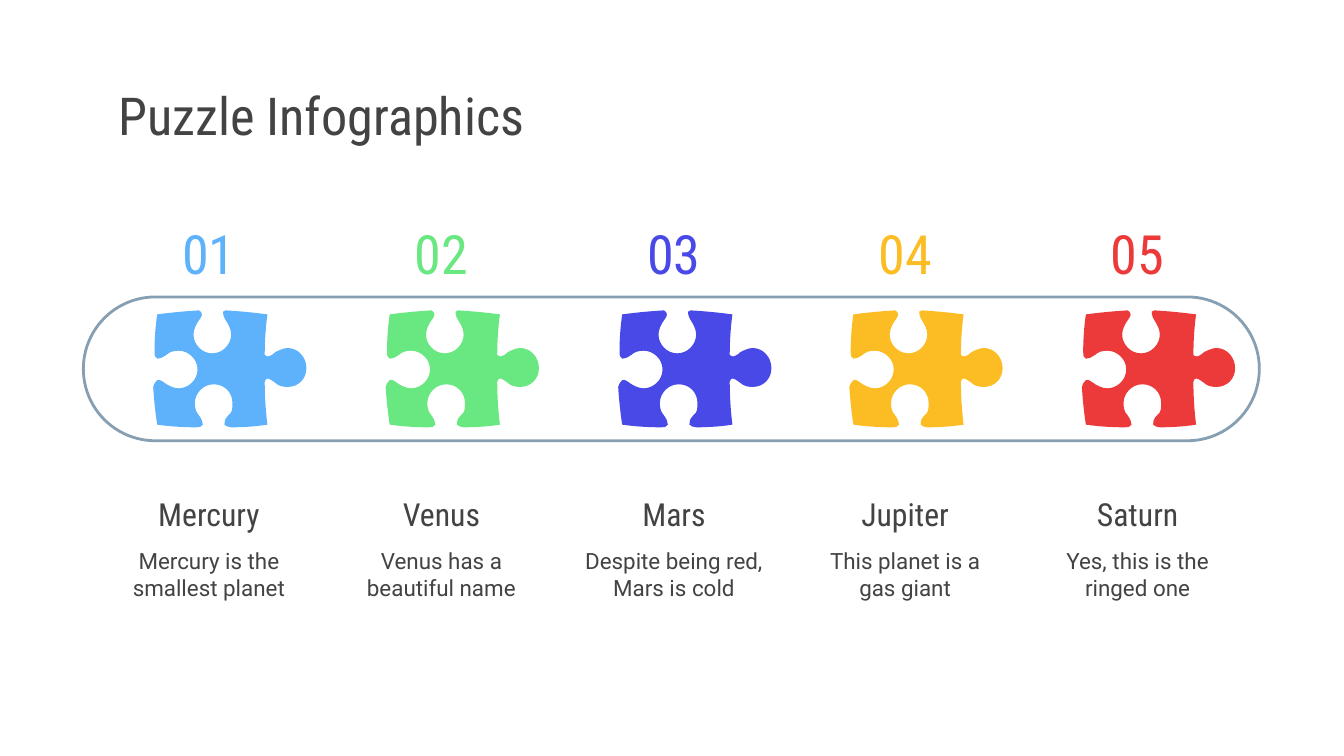
from pptx import Presentation
from pptx.dml.color import RGBColor as RGB
from pptx.enum.shapes import MSO_SHAPE as SHAPE
from pptx.enum.text import MSO_ANCHOR as ANCHOR, MSO_AUTO_SIZE as AUTO, PP_ALIGN as ALIGN
from pptx.oxml.ns import qn
from pptx.util import Pt

PX = 9144  # EMU per px, 100 px to the inch
THEME = {
    "head": "Roboto Condensed", "body": "Roboto",
    "ink": "434343", "frame": "869FB2",
    "title": 28, "number": 29, "name": 17, "note": 12,
}
PLANETS = [
    ("Mercury", "Mercury is the smallest planet", "5EB2FC"),
    ("Venus", "Venus has a beautiful name", "69E781"),
    ("Mars", "Despite being red, Mars is cold", "4949E7"),
    ("Jupiter", "This planet is a gas giant", "FCBD24"),
    ("Saturn", "Yes, this is the ringed one", "EC3A3B"),
]
PITCH = 172.8  # column spacing

# Outline of the first puzzle piece: a chain of cubic curves,
# each row giving two control points and an end point
START = (151, 316)
CURVES = [
    # bottom socket
    (151, 314, 150, 312, 148, 309), (146, 307, 145, 304, 145, 300),
    (145, 293, 151, 286, 159, 286), (167, 286, 173, 292, 173, 300),
    (173, 304, 173, 307, 170, 309), (167, 312, 167, 314, 167, 316),
    (168, 317, 170, 318, 172, 318), (188, 318, 199, 316, 199, 316),
    # right knob
    (199, 316, 197, 302, 197, 284), (197, 283, 197, 283, 198, 282),
    (200, 281, 202, 283, 205, 285), (207, 287, 210, 288, 214, 288),
    (222, 288, 228, 282, 228, 274), (228, 266, 222, 259, 214, 259),
    (211, 259, 207, 261, 205, 262), (203, 264, 200, 266, 198, 265),
    (197, 265, 197, 265, 197, 264), (197, 247, 199, 234, 199, 234),
    # top socket
    (199, 234, 185, 232, 168, 231), (167, 232, 167, 232, 166, 232),
    (166, 235, 167, 237, 169, 240), (170, 242, 172, 245, 172, 249),
    (172, 256, 166, 263, 158, 263), (150, 263, 144, 256, 144, 249),
    (144, 245, 146, 242, 147, 240), (149, 237, 151, 235, 150, 233),
    (150, 232, 149, 232, 148, 231), (131, 232, 117, 234, 117, 234),
    # left socket
    (117, 234, 115, 246, 115, 262), (115, 264, 115, 266, 117, 267),
    (119, 267, 121, 266, 124, 264), (126, 262, 129, 261, 133, 261),
    (140, 261, 147, 267, 147, 275), (147, 283, 140, 289, 133, 289),
    (129, 289, 126, 287, 124, 286), (121, 284, 119, 282, 117, 283),
    (115, 284, 115, 286, 114, 288), (115, 304, 117, 316, 117, 316),
    (117, 316, 129, 318, 146, 318), (148, 318, 150, 318, 151, 316),
]


def box(*lengths):
    return [v * PX for v in lengths]


def write(sp, text, size, font, color, align=ALIGN.CENTER, anchor=ANCHOR.MIDDLE):
    tf = sp.text_frame
    frame = {"word_wrap": True, "auto_size": AUTO.NONE, "vertical_anchor": anchor}
    frame.update({f"margin_{side}": 10 * PX for side in ("left", "top", "right", "bottom")})
    for key, value in frame.items():
        setattr(tf, key, value)
    p = tf.paragraphs[0]
    p.alignment = align
    r = p.add_run()
    r.text = text
    for key, value in {"size": Pt(size), "name": font, "bold": False}.items():
        setattr(r.font, key, value)
    r.font.color.rgb = RGB.from_string(color)


prs = Presentation()
prs.slide_width, prs.slide_height = 1000 * PX, 5625 * PX // 10
s = prs.slides.add_slide(prs.slide_layouts[5])

# Title
title = s.shapes.title
title.left, title.top, title.width, title.height = box(78, 59, 845, 53)
write(title, "Puzzle Infographics", THEME["title"], THEME["head"], THEME["ink"], ALIGN.LEFT)

# Rounded frame around the pieces
frame = s.shapes.add_shape(SHAPE.ROUNDED_RECTANGLE, *box(62, 221, 875, 107))
frame.adjustments[0] = 0.5
frame.shadow.inherit = False
frame.fill.background()
frame.line.color.rgb = RGB.from_string(THEME["frame"])
frame.line.width = Pt(1.5)

# One column per planet: piece, number, name, note
for i, (name, note, color) in enumerate(PLANETS):
    dx = round(i * PITCH)
    builder = s.shapes.build_freeform(START[0] + dx, START[1], scale=PX)
    builder.add_line_segments(
        [(c[k] + dx, c[k + 1]) for c in CURVES for k in (0, 2, 4)], close=True)
    piece = builder.convert_to_shape()
    # Join each three line segments into one cubic curve
    lines = list(piece.element.iter(qn("a:lnTo")))
    for first, *others in zip(lines[::3], lines[1::3], lines[2::3]):
        first.tag = qn("a:cubicBezTo")
        for line in others:
            first.append(line[0])
            line.getparent().remove(line)
    piece.shadow.inherit = False
    piece.fill.solid()
    piece.fill.fore_color.rgb = RGB.from_string(color)
    piece.line.fill.background()

    sp = s.shapes.add_textbox(*box(114 + dx, 171, 83, 35))
    write(sp, f"{i + 1:02}", THEME["number"], THEME["head"], color)
    sp = s.shapes.add_textbox(*box(79 + dx, 359, 153, 47))
    write(sp, name, THEME["name"], THEME["head"], THEME["ink"])
    sp = s.shapes.add_textbox(*box(79 + dx, 397, 153, 60))
    write(sp, note, THEME["note"], THEME["body"], THEME["ink"], anchor=ANCHOR.TOP)

prs.save("out.pptx")
